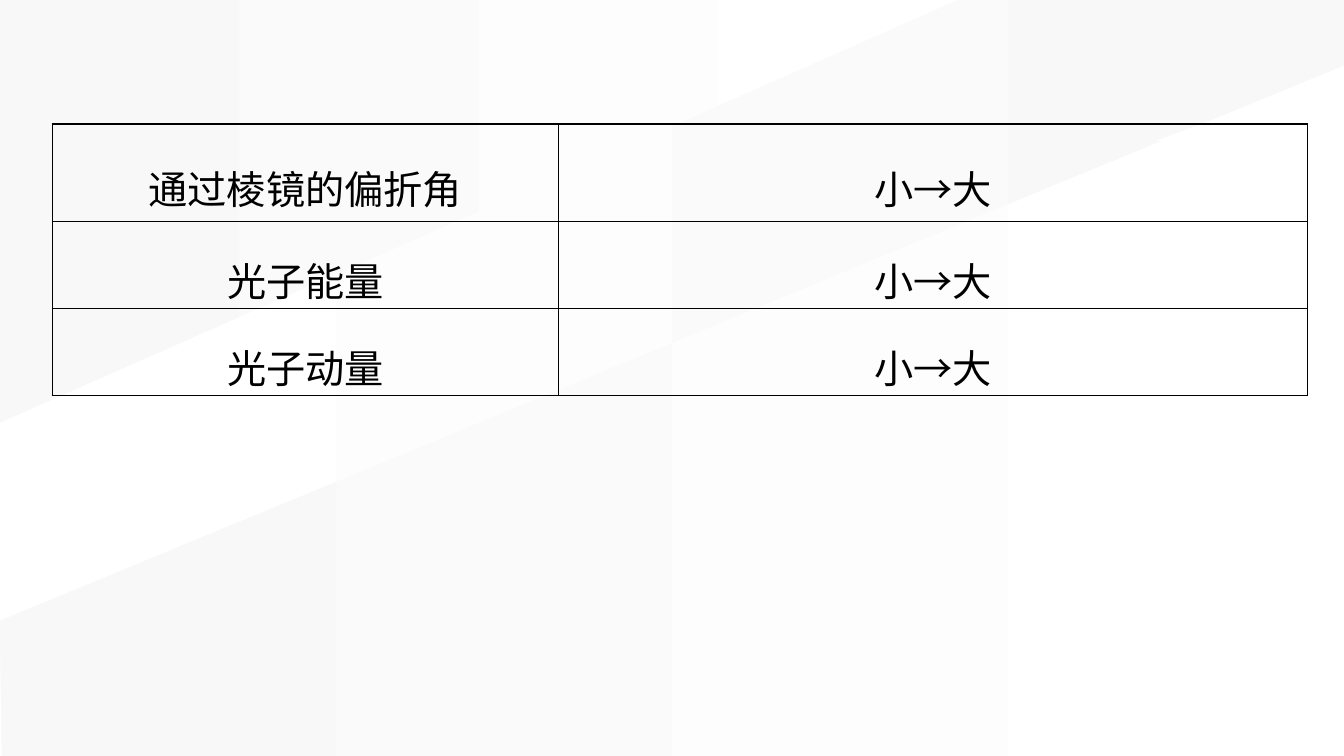
from lxml.etree import SubElement
from pptx import Presentation
from pptx.dml.color import RGBColor
from pptx.enum.dml import MSO_PATTERN
from pptx.enum.text import MSO_ANCHOR, PP_ALIGN
from pptx.oxml.ns import qn
from pptx.util import Pt

WIDTH, HEIGHT = 960, 540
COLORS = {"ink": "000000", "white": "FFFFFF", "mist": "F8F8F8", "dots": "F2F2F2"}
LATIN, CJK = "Times New Roman", "Noto Sans CJK SC"

# Outline points, then the fill colours from right to left
BACKDROP = [
    ([(0, 0), (WIDTH, 0), (WIDTH, HEIGHT), (0, HEIGHT)], ("mist", "white")),
    ([(0, 0), (684, 0), (0, 301.7)], ("white", "mist")),
    ([(0, 443.5), (WIDTH, 46.8), (WIDTH, HEIGHT), (1.4, HEIGHT)], ("white", "mist")),
    ([(825.1, 100.8), (WIDTH, 51.1), (WIDTH, 100.8)], ("white",)),
]

TREND = [("小", LATIN), ("→", CJK), ("大", LATIN)]
ROWS = [
    ([("通过棱镜的偏折角", LATIN)], TREND),
    ([("光子能量", LATIN)], TREND),
    ([("光子动量", LATIN)], TREND),
]
TABLE_LEFT, TABLE_TOP = 37.4, 88.6
COLUMN_WIDTHS = [361.4, 535]
ROW_HEIGHTS = [69.8, 59.8, 59.8]


def color(name):
    return RGBColor.from_string(COLORS[name])


def add_panel(page, points, fills):
    builder = page.shapes.build_freeform(Pt(points[0][0]), Pt(points[0][1]))
    builder.add_line_segments([(Pt(x), Pt(y)) for x, y in points[1:]], close=True)
    panel = builder.convert_to_shape()
    panel.shadow.inherit = False
    panel.line.fill.background()
    if len(fills) == 1:
        panel.fill.solid()
        panel.fill.fore_color.rgb = color(fills[0])
        return
    panel.fill.gradient()
    panel.fill.gradient_angle = 180
    for stop, name in zip(panel.fill.gradient_stops, fills):
        stop.color.rgb = color(name)


def write(frame, pieces, size=28, align=PP_ALIGN.CENTER, spacing=1.5, ink="ink"):
    para = frame.paragraphs[0]
    para.alignment = align
    para.line_spacing = spacing
    for text, font in pieces:
        span = para.add_run()
        span.text = text
        span.font.size = Pt(size)
        span.font.name = font
        span.font.color.rgb = color(ink)
        SubElement(span.font._element, qn("a:ea"), typeface=CJK)


def add_borders(cell, width=1):
    properties = cell._tc.get_or_add_tcPr()
    for side in ("lnL", "lnR", "lnT", "lnB"):
        line = SubElement(properties, qn(f"a:{side}"), w=str(Pt(width)))
        fill = SubElement(line, qn("a:solidFill"))
        SubElement(fill, qn("a:srgbClr"), val=COLORS["ink"])


def add_comparison(page):
    table = page.shapes.add_table(
        len(ROWS), len(COLUMN_WIDTHS), Pt(TABLE_LEFT), Pt(TABLE_TOP),
        Pt(sum(COLUMN_WIDTHS)), Pt(sum(ROW_HEIGHTS))).table
    table.first_row = table.horz_banding = False
    for column, width in zip(table.columns, COLUMN_WIDTHS):
        column.width = Pt(width)
    for row, height, contents in zip(table.rows, ROW_HEIGHTS, ROWS):
        row.height = Pt(height)
        for cell, pieces in zip(row.cells, contents):
            cell.vertical_anchor = MSO_ANCHOR.MIDDLE
            cell.margin_left = cell.margin_right = Pt(0.75)
            cell.margin_top = cell.margin_bottom = Pt(0.75)
            add_borders(cell)
            cell.fill.background()
            write(cell.text_frame, pieces)


def main():
    deck = Presentation()
    deck.slide_width, deck.slide_height = Pt(WIDTH), Pt(HEIGHT)
    page = deck.slides.add_slide(deck.slide_layouts[6])
    paper = page.background.fill
    paper.patterned()
    paper.pattern = MSO_PATTERN.PERCENT_5
    paper.fore_color.rgb = color("dots")
    paper.back_color.rgb = color("white")
    for points, fills in BACKDROP:
        add_panel(page, points, fills)
    add_comparison(page)
    deck.save("out.pptx")


if __name__ == "__main__":
    main()
